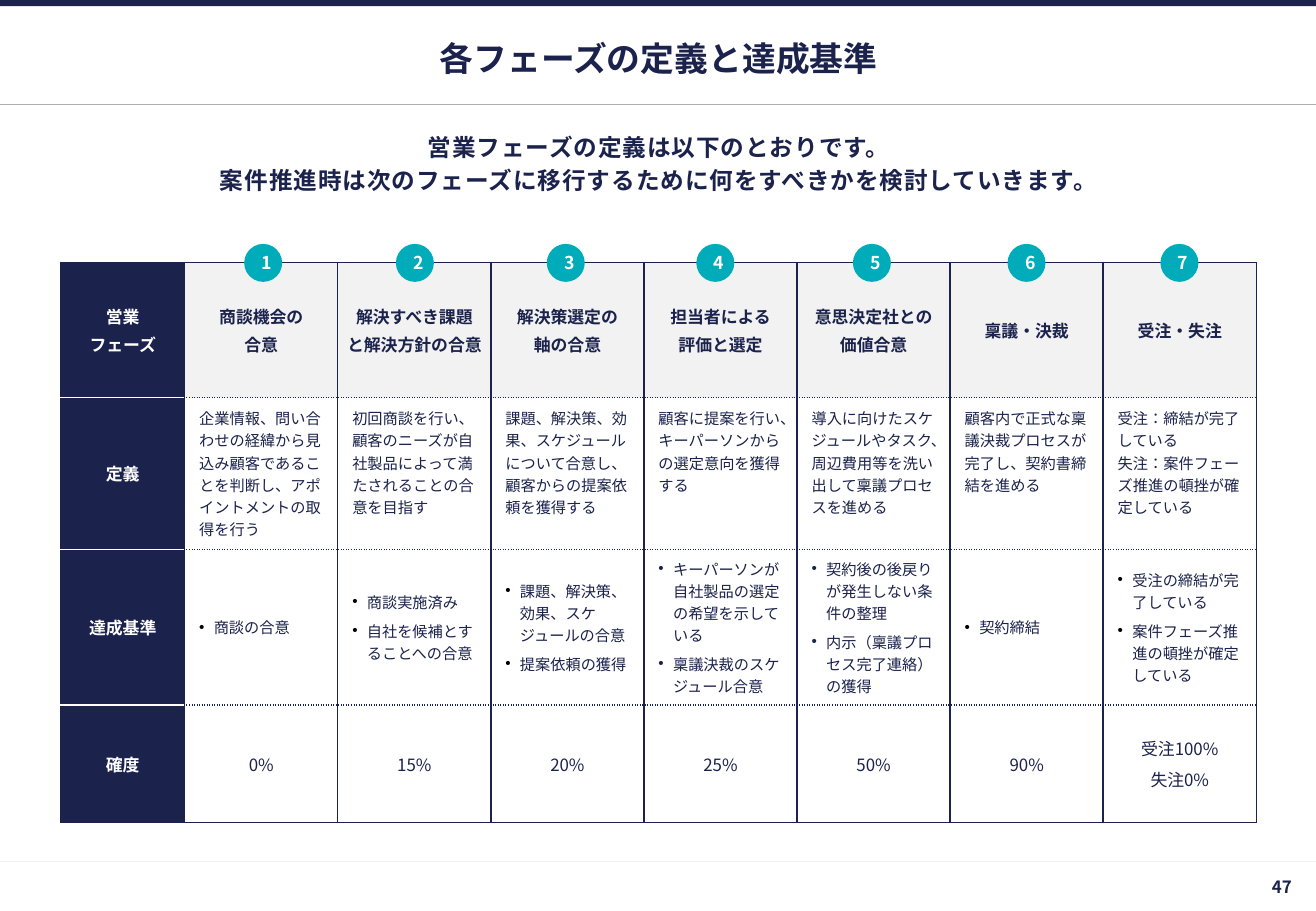
"""Build the slide that defines each sales phase and its completion criteria."""
from dataclasses import dataclass

from lxml.etree import SubElement
from pptx import Presentation
from pptx.dml.color import RGBColor
from pptx.enum.lang import MSO_LANGUAGE_ID
from pptx.enum.shapes import MSO_CONNECTOR, MSO_SHAPE
from pptx.enum.text import MSO_ANCHOR, MSO_AUTO_SIZE, PP_ALIGN
from pptx.oxml.ns import qn
from pptx.util import Pt

FONT = "Noto Sans CJK JP"
NAVY, TEAL, WHITE, BLACK = "1B224C", "00ACBA", "FFFFFF", "000000"
PALE, GREY = "F2F2F2", "AFAFAF"
SLIDE_WIDTH, SLIDE_HEIGHT = 779.76, 540
MARGIN, CONTENT_WIDTH = 36, 708.48
LABEL_WIDTH, PHASE_WIDTH = 73.44, 90.72
TABLE_TOP, BADGE_TOP, BADGE_SIZE = 155.5, 144.6, 22.5


@dataclass(frozen=True)
class TextStyle:
    size: float
    color: str = NAVY
    bold: bool = False
    align: PP_ALIGN = PP_ALIGN.CENTER
    anchor: MSO_ANCHOR = MSO_ANCHOR.MIDDLE
    space_after: float = 0
    line_spacing: float = 1.0
    tracking: float = 0
    margins: tuple[float, float, float, float] = (2.88, 2.88, 2.88, 2.88)
    bullet_color: str | None = None


@dataclass(frozen=True)
class Phase:
    badge_left: float
    name: str
    definition: str
    criteria: str
    probability: str
    bullet_color: str = BLACK


@dataclass(frozen=True)
class TableRow:
    label: str
    field: str
    height: float
    fill: str
    margins: tuple[float, float, float, float]
    size: float = 10
    bold: bool = False
    align: PP_ALIGN = PP_ALIGN.CENTER
    anchor: MSO_ANCHOR = MSO_ANCHOR.MIDDLE
    space_after: float = 0

    def style(self, phase: Phase) -> TextStyle:
        return TextStyle(
            self.size, NAVY, self.bold, self.align, self.anchor, self.space_after,
            margins=self.margins,
            bullet_color=phase.bullet_color if self.field == "criteria" else None)


PHASES = [
    Phase(144.7, "商談機会の\n合意",
          "企業情報、問い合わせの経緯から見込み顧客であることを判断し、アポイントメントの取得を行う",
          "商談の合意", "0%"),
    Phase(234.6, "解決すべき課題\nと解決方針の合意",
          "初回商談を行い、顧客のニーズが自社製品によって満たされることの合意を目指す",
          "商談実施済み\n自社を候補とすることへの合意", "15%"),
    Phase(324, "解決策選定の\n軸の合意",
          "課題、解決策、効果、スケジュールについて合意し、顧客からの提案依頼を獲得する",
          "課題、解決策、効果、スケジュールの合意\n提案依頼の獲得", "20%"),
    Phase(412.6, "担当者による\n評価と選定",
          "顧客に提案を行い、キーパーソンからの選定意向を獲得する",
          "キーパーソンが自社製品の選定の希望を示している\n稟議決裁のスケジュール合意",
          "25%", NAVY),
    Phase(505.4, "意思決定社との\n価値合意",
          "導入に向けたスケジュールやタスク、周辺費用等を洗い出して稟議プロセスを進める",
          "契約後の後戻りが発生しない条件の整理\n内示（稟議プロセス完了連絡）の獲得",
          "50%", NAVY),
    Phase(597, "稟議・決裁",
          "顧客内で正式な稟議決裁プロセスが完了し、契約書締結を進める",
          "契約締結", "90%"),
    Phase(687.6, "受注・失注",
          "受注：締結が完了している\n失注：案件フェーズ推進の頓挫が確定している",
          "受注の締結が完了している\n案件フェーズ推進の頓挫が確定している",
          "受注100%\n失注0%"),
]
ROWS = [
    TableRow("営業\nフェーズ", "name", 80.2, PALE, (2.88, 11.52, 2.88, 11.52),
             bold=True, space_after=2),
    TableRow("定義", "definition", 80.64, WHITE, (8.64, 5.76, 5.76, 5.76), 9,
             align=PP_ALIGN.LEFT, anchor=MSO_ANCHOR.TOP),
    TableRow("達成基準", "criteria", 92.16, WHITE, (8.64, 2.88, 5.76, 2.88), 9,
             align=PP_ALIGN.LEFT, space_after=4),
    TableRow("確度", "probability", 69.84, WHITE, (2.88, 2.88, 2.88, 2.88),
             space_after=4),
]
LABEL_STYLE = TextStyle(10, WHITE, True, space_after=2)


def paint(color_format, color: str) -> None:
    color_format.rgb = RGBColor.from_string(color)


def fill_solid(target, color: str) -> None:
    target.fill.solid()
    paint(target.fill.fore_color, color)


def write_text(frame, text: str, style: TextStyle) -> None:
    frame.text = text
    for paragraph in frame.paragraphs:
        paragraph.alignment = style.align
        paragraph.line_spacing = style.line_spacing
        paragraph.space_before = Pt(0)
        paragraph.space_after = Pt(style.space_after)
        if style.bullet_color:
            add_bullet(paragraph, style.bullet_color)
        for run in paragraph.runs:
            run.font.size = Pt(style.size)
            run.font.bold = style.bold
            run.font.name = FONT
            run.font.language_id = MSO_LANGUAGE_ID.JAPANESE
            paint(run.font.color, style.color)
            properties = run._r.get_or_add_rPr()
            SubElement(properties, qn("a:ea")).set("typeface", FONT)
            if style.tracking:
                properties.set("spc", str(round(style.tracking * 100)))


def add_bullet(paragraph, color: str) -> None:
    properties = paragraph._p.get_or_add_pPr()
    properties.set("marL", str(Pt(8.64)))
    properties.set("indent", str(-Pt(8.64)))
    SubElement(SubElement(properties, qn("a:buClr")), qn("a:srgbClr")).set("val", color)
    SubElement(properties, qn("a:buFont")).set("typeface", "Arial")
    SubElement(properties, qn("a:buChar")).set("char", "•")


def write_box(box, area: tuple[float, float, float, float], text: str,
              style: TextStyle) -> None:
    box.left, box.top, box.width, box.height = map(Pt, area)
    frame = box.text_frame
    frame.word_wrap = True
    frame.auto_size = MSO_AUTO_SIZE.NONE
    frame.vertical_anchor = style.anchor
    (frame.margin_left, frame.margin_top,
     frame.margin_right, frame.margin_bottom) = map(Pt, style.margins)
    write_text(frame, text, style)


def add_panel(slide, kind: MSO_SHAPE, area: tuple[float, float, float, float], color: str):
    panel = slide.shapes.add_shape(kind, *map(Pt, area))
    panel.shadow.inherit = False
    fill_solid(panel, color)
    panel.line.fill.background()
    return panel


def add_rule(slide, top: float, color: str) -> None:
    rule = slide.shapes.add_connector(
        MSO_CONNECTOR.STRAIGHT, Pt(0), Pt(top), Pt(SLIDE_WIDTH), Pt(top))
    rule.line.width = Pt(0.75)
    paint(rule.line.color, color)
    SubElement(rule._element.spPr, qn("a:effectLst"))


def add_border(cell, side: str, color: str, dash: str) -> None:
    border = SubElement(cell._tc.get_or_add_tcPr(), qn(f"a:ln{side}"), w=str(Pt(1)))
    SubElement(SubElement(border, qn("a:solidFill")), qn("a:srgbClr")).set("val", color)
    SubElement(border, qn("a:prstDash")).set("val", dash)


def fill_cell(cell, text: str, style: TextStyle, fill: str, edges: tuple[bool, bool],
              divider: tuple[str, str]) -> None:
    outline = (NAVY, "solid")
    is_first, is_last = edges
    add_border(cell, "L", *outline)
    add_border(cell, "R", *outline)
    add_border(cell, "T", *(outline if is_first else divider))
    add_border(cell, "B", *(outline if is_last else divider))
    fill_solid(cell, fill)
    cell.vertical_anchor = style.anchor
    (cell.margin_left, cell.margin_top,
     cell.margin_right, cell.margin_bottom) = map(Pt, style.margins)
    write_text(cell.text_frame, text, style)


def add_phase_table(slide) -> None:
    height = sum(row.height for row in ROWS)
    table = slide.shapes.add_table(
        len(ROWS), len(PHASES) + 1, Pt(MARGIN), Pt(TABLE_TOP),
        Pt(CONTENT_WIDTH), Pt(height)).table
    table.first_row = table.horz_banding = False
    for index, column in enumerate(table.columns):
        column.width = Pt(PHASE_WIDTH if index else LABEL_WIDTH)
    for index, row in enumerate(ROWS):
        table.rows[index].height = Pt(row.height)
        edges = (index == 0, index == len(ROWS) - 1)
        fill_cell(table.cell(index, 0), row.label, LABEL_STYLE, NAVY, edges,
                  (WHITE, "solid"))
        for number, phase in enumerate(PHASES, 1):
            fill_cell(table.cell(index, number), getattr(phase, row.field),
                      row.style(phase), row.fill, edges, (NAVY, "sysDot"))


def main() -> None:
    deck = Presentation()
    deck.slide_width, deck.slide_height = Pt(SLIDE_WIDTH), Pt(SLIDE_HEIGHT)
    slide = deck.slides.add_slide(deck.slide_layouts[2])
    add_rule(slide, 510.5, PALE)
    add_panel(slide, MSO_SHAPE.RECTANGLE, (0, 0, SLIDE_WIDTH, 3.6), NAVY)
    add_rule(slide, 62, GREY)
    write_box(slide.shapes.title, (MARGIN, 18.7, CONTENT_WIDTH, 31),
              "各フェーズの定義と達成基準", TextStyle(20, bold=True))
    write_box(slide.placeholders[1], (MARGIN, 79.2, CONTENT_WIDTH, 48.2),
              "営業フェーズの定義は以下のとおりです。\n"
              "案件推進時は次のフェーズに移行するために何をすべきかを検討していきます。",
              TextStyle(14, bold=True, anchor=MSO_ANCHOR.TOP, space_after=6,
                        line_spacing=0.8, tracking=0.5))
    page_area = (640.8, 511.2, 139, 28.8)
    write_box(slide.shapes.add_textbox(*map(Pt, page_area)), page_area, "47",
              TextStyle(10, bold=True, align=PP_ALIGN.RIGHT,
                        margins=(2.88, 2.88, 14.4, 2.88)))
    add_phase_table(slide)
    for number, phase in enumerate(PHASES, 1):
        area = (phase.badge_left, BADGE_TOP, BADGE_SIZE, BADGE_SIZE)
        write_box(add_panel(slide, MSO_SHAPE.OVAL, area, TEAL), area, str(number),
                  TextStyle(10.5, WHITE, True, margins=(7.2, 3.6, 7.2, 3.6)))
    deck.save("out.pptx")


if __name__ == "__main__":
    main()
